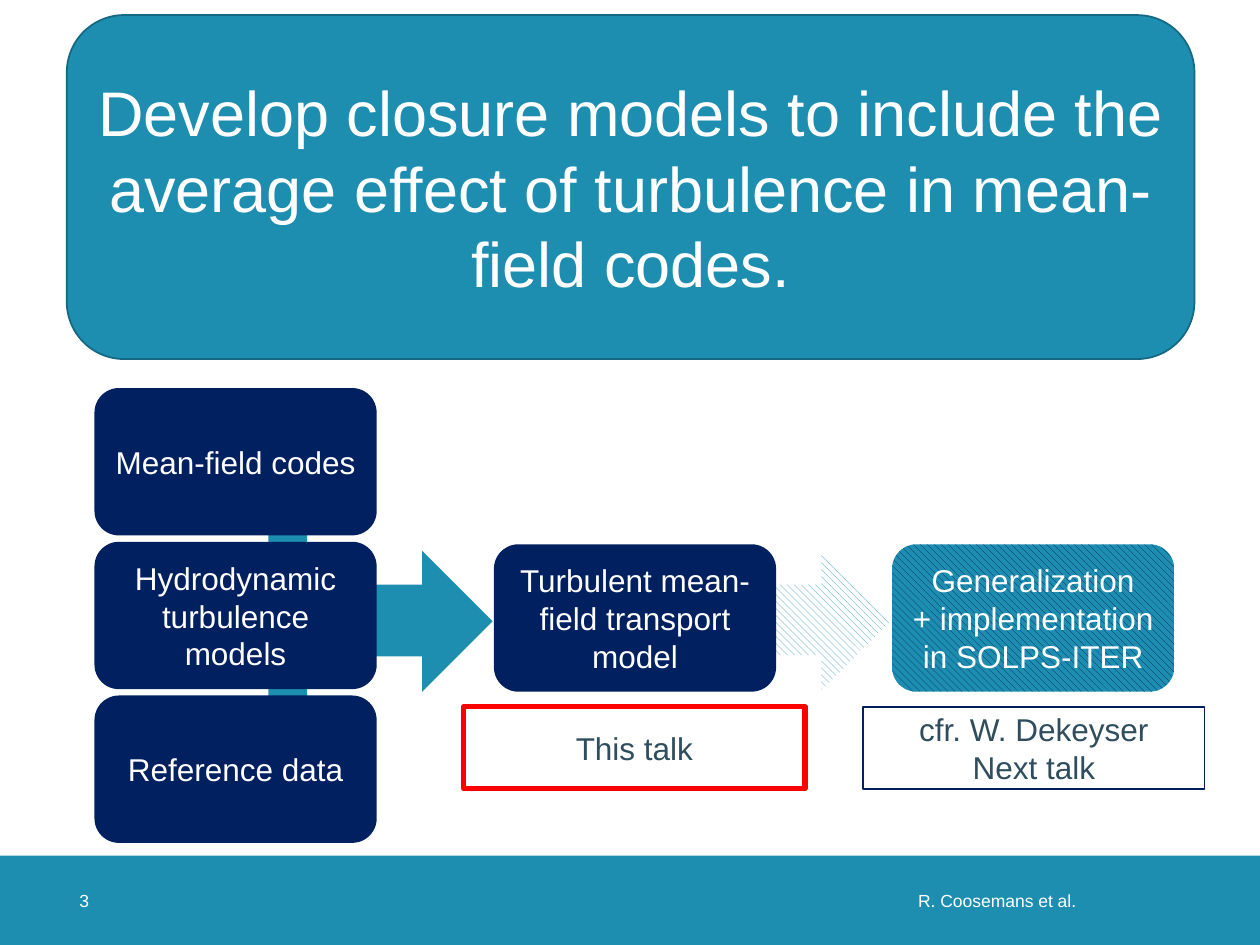
from dataclasses import dataclass
from typing import Optional

import pptx
import pptx.dml.color
import pptx.enum.dml
import pptx.enum.shapes
import pptx.enum.text
import pptx.util

Inches = pptx.util.Inches
SHAPE = pptx.enum.shapes.MSO_SHAPE
ALIGN = pptx.enum.text.PP_ALIGN
COLORS = {
    "teal": "1D8DB0",
    "teal_edge": "156882",
    "navy": "002060",
    "slate": "2F4D5D",
    "red": "FF0000",
    "white": "FFFFFF",
}
BOX_W, BOX_H = 2.24, 1.17
NOTE_W, NOTE_H, NOTE_Y = 2.71, 0.65, 5.61
ARROW_W, ARROW_H = 1.12, 1.44
BEND_W, BEND_H = 1.58, 1.23
FOOTER_Y, FOOTER_H = 6.79, 0.71


@dataclass
class Block:
    kind: SHAPE
    left: float
    top: float
    width: float
    height: float
    fill: Optional[str] = None
    hatch: Optional[str] = None
    line: Optional[str] = None
    line_width: float = 1
    text: str = ""
    size: int = 18
    color: str = "white"
    rotation: int = 0
    flip: bool = False


def rgb(name: str) -> pptx.dml.color.RGBColor:
    return pptx.dml.color.RGBColor.from_string(COLORS[name])


def write_text(tf, text: str, size: int, color: str, align: ALIGN,
               margins: Optional[dict] = None) -> None:
    frame_format = {
        "word_wrap": True,
        "vertical_anchor": pptx.enum.text.MSO_ANCHOR.MIDDLE,
        **(margins or {}),
    }
    for name, value in frame_format.items():
        setattr(tf, name, value)
    font_format = {"name": "Arial", "size": pptx.util.Pt(size)}
    for i, line in enumerate(text.split("\n")):
        p = tf.paragraphs[0] if i == 0 else tf.add_paragraph()
        p.alignment = align
        r = p.add_run()
        r.text = line
        for name, value in font_format.items():
            setattr(r.font, name, value)
        r.font.color.rgb = rgb(color)


def draw_block(s, b: Block) -> None:
    """Draw a shape; hatch is the stripe colour laid over its fill."""
    sp = s.shapes.add_shape(b.kind, *map(Inches, (b.left, b.top, b.width, b.height)))
    sp.shadow.inherit = False
    sp.rotation = b.rotation
    if b.flip:
        sp._element.spPr.xfrm.set("flipH", "1")
    if b.hatch:
        sp.fill.patterned()
        sp.fill.pattern = pptx.enum.dml.MSO_PATTERN.WIDE_DOWNWARD_DIAGONAL
        sp.fill.fore_color.rgb = rgb(b.hatch)
        sp.fill.back_color.rgb = rgb(b.fill)
    elif b.fill:
        sp.fill.solid()
        sp.fill.fore_color.rgb = rgb(b.fill)
    else:
        sp.fill.background()
    if b.line:
        sp.line.color.rgb = rgb(b.line)
        sp.line.width = pptx.util.Pt(b.line_width)
    else:
        sp.line.fill.background()
    if b.text:
        write_text(sp.text_frame, b.text, b.size, b.color, ALIGN.CENTER)


def draw_footer_text(s, text: str, left: float, width: float, align: ALIGN,
                     right_margin: float = 0) -> None:
    tb = s.shapes.add_textbox(*map(Inches, (left, FOOTER_Y, width, FOOTER_H)))
    margins = {f"margin_{side}": 0 for side in ("left", "top", "bottom")}
    margins["margin_right"] = Inches(right_margin)
    write_text(tb.text_frame, text, 10, "white", align, margins)


def step(left: float, top: float, text: str, fill: str = "navy",
         hatch: Optional[str] = None) -> Block:
    return Block(SHAPE.ROUNDED_RECTANGLE, left, top, BOX_W, BOX_H, fill, hatch, text=text)


def note(left: float, text: str, line: str, line_width: float) -> Block:
    return Block(SHAPE.RECTANGLE, left, NOTE_Y, NOTE_W, NOTE_H, line=line,
                 line_width=line_width, text=text, color="slate")


def flow_arrow(left: float, top: float, fill: str, hatch: Optional[str] = None) -> Block:
    return Block(SHAPE.DOWN_ARROW, left, top, ARROW_W, ARROW_H, fill, hatch, rotation=270)


def bend(top: float, rotation: int = 0, flip: bool = False) -> Block:
    return Block(SHAPE.BENT_ARROW, 2.13, top, BEND_W, BEND_H, "teal",
                 rotation=rotation, flip=flip)


BLOCKS = [
    Block(SHAPE.RECTANGLE, 0, FOOTER_Y, 10, FOOTER_H, "teal"),
    step(7.08, 4.32, "Generalization\n+ implementation in SOLPS-ITER", "teal", "navy"),
    flow_arrow(5.8, 4.2, "white", "teal"),
    note(6.85, "cfr. W. Dekeyser\nNext talk", "navy", 1),
    Block(SHAPE.ROUNDED_RECTANGLE, 0.53, 0.12, 8.95, 2.73, "teal", line="teal_edge",
          text="Develop closure models to include the average effect of "
               "turbulence in mean-field codes.", size=36),
    bend(3.87, rotation=180, flip=True),
    bend(4.68),
    flow_arrow(2.63, 4.21, "teal"),
    step(3.92, 4.32, "Turbulent mean-field transport model"),
    note(3.68, "This talk", "red", 3),
]
INPUTS = ["Mean-field codes", "Hydrodynamic turbulence models", "Reference data"]
INPUT_TOP, INPUT_PITCH = 3.08, 1.22


def main() -> None:
    prs = pptx.Presentation()
    prs.slide_width, prs.slide_height = Inches(10), Inches(7.5)
    s = prs.slides.add_slide(prs.slide_layouts[6])
    inputs = [step(0.75, INPUT_TOP + i * INPUT_PITCH, text) for i, text in enumerate(INPUTS)]
    for block in BLOCKS + inputs:
        draw_block(s, block)
    draw_footer_text(s, "3", 0.63, 0.71, ALIGN.LEFT)
    draw_footer_text(s, "R. Coosemans et al.", 4.7, 4.04, ALIGN.RIGHT, right_margin=0.2)
    prs.save("out.pptx")


if __name__ == "__main__":
    main()
